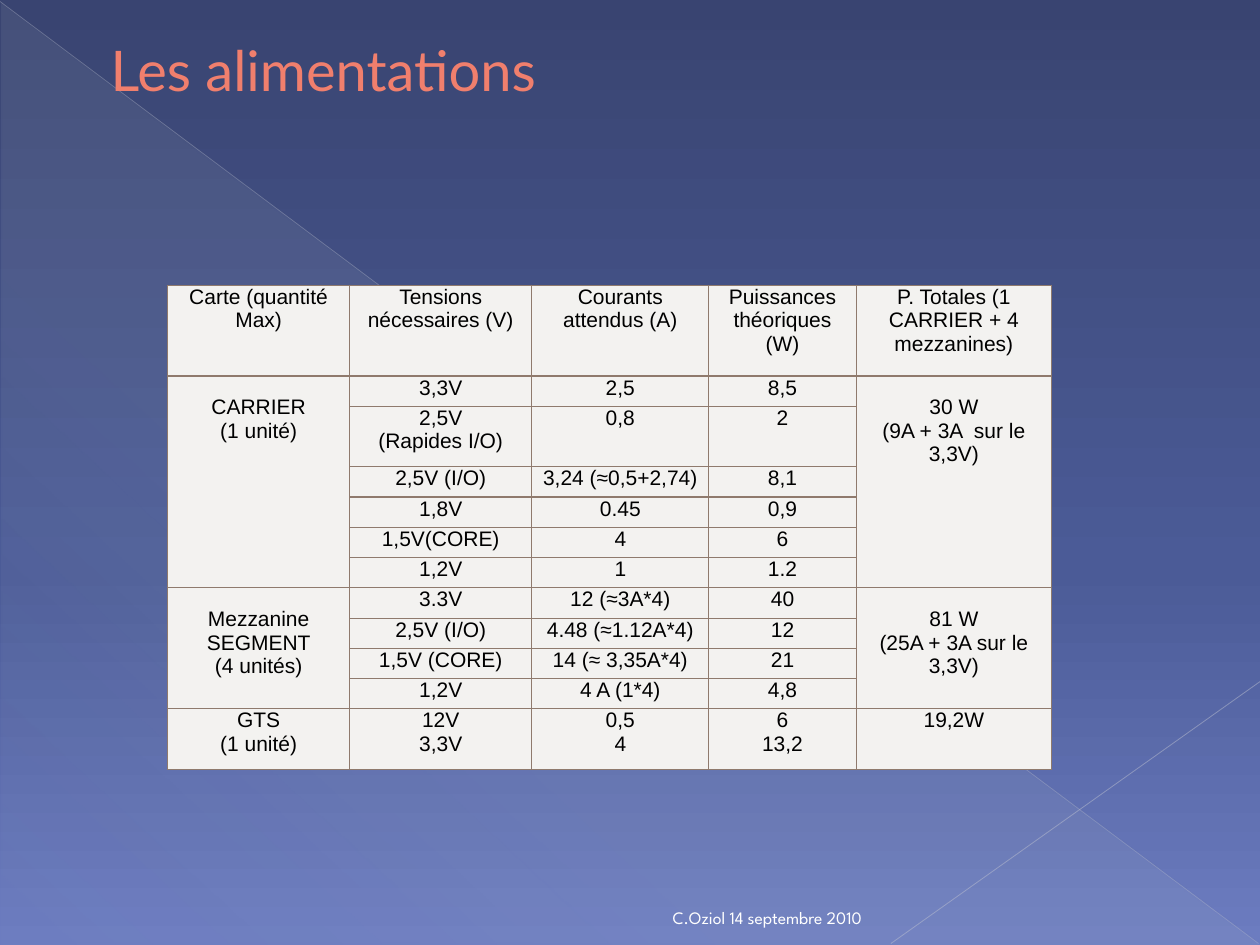
import pptx
import pptx.util
import pptx.dml.color
import pptx.enum.shapes
import pptx.enum.text
import pptx.oxml
import pptx.oxml.ns
import lxml.etree

Cm, Pt = pptx.util.Cm, pptx.util.Pt
RGBColor = pptx.dml.color.RGBColor
Align, Anchor = pptx.enum.text.PP_ALIGN, pptx.enum.text.MSO_ANCHOR
qn = pptx.oxml.ns.qn

NIGHT = RGBColor(0x39, 0x44, 0x71)
BLUE = RGBColor(0x4B, 0x5B, 0x97)
LILAC = RGBColor(0x6C, 0x7C, 0xC0)
MIST = RGBColor(0xC5, 0xD1, 0xD7)
FALL = RGBColor(0xBA, 0xBE, 0xCD)
RISE = RGBColor(0xC2, 0xC5, 0xD2)
CORAL = RGBColor(0xF0, 0x7F, 0x6D)
RUST = RGBColor(0x91, 0x45, 0x33)
WHITE = RGBColor(0xFF, 0xFF, 0xFF)
BLACK = RGBColor(0, 0, 0)
PAPER = RGBColor(0xF3, 0xF2, 0xF0)
TAUPE = RGBColor(0x8F, 0x7A, 0x6D)

UNIT = 0.61
COLS = [3.67, 3.67, 3.57, 2.97, 3.94]
ROWS = [3, 1, 2, 1, 1, 1, 1, 1, 1, 1, 1, 2]
SPANS = {(1, 0): 6, (1, 4): 6, (7, 0): 4, (7, 4): 4}
DATA = [
    ["Carte (quantité\nMax)", "Tensions nécessaires (V)", "Courants attendus (A)",
     "Puissances\nthéoriques (W)", "P. Totales (1 CARRIER + 4 mezzanines)"],
    ["CARRIER\n(1 unité)", "3,3V", "2,5", "8,5", "30 W\n(9A + 3A  sur le 3,3V)"],
    ["", "2,5V\n(Rapides I/O)", "0,8", "2", ""],
    ["", "2,5V (I/O)", "3,24 (≈0,5+2,74)", "8,1", ""],
    ["", "1,8V", "0.45", "0,9", ""],
    ["", "1,5V(CORE)", "4", "6", ""],
    ["", "1,2V", "1", "1.2", ""],
    ["Mezzanine\nSEGMENT\n(4 unités)", "3.3V", "12 (≈3A*4)", "40",
     "81 W\n(25A + 3A sur le 3,3V)"],
    ["", "2,5V (I/O)", "4.48 (≈1.12A*4)", "12", ""],
    ["", "1,5V (CORE)", "14 (≈ 3,35A*4)", "21", ""],
    ["", "1,2V", "4 A (1*4)", "4,8", ""],
    ["GTS\n(1 unité)", "12V\n3,3V", "0,5\n4", "6\n13,2", "19,2W"],
]


def node(root, tag, **attrs):
    """Append a drawing element and return it."""
    return lxml.etree.SubElement(root, qn(tag), {k: str(v) for k, v in attrs.items()})


def tint(root, color, alpha=100):
    """Append a colour with its opacity in percent."""
    item = node(root, "a:srgbClr", val=color)
    if alpha < 100:
        node(item, "a:alpha", val=alpha * 1000)


def blend(fill, root, stops, angle):
    """Fill with a linear gradient of (place, colour, opacity) stops."""
    fill.gradient()
    grad = next(root.iter(qn("a:gradFill")))
    for child in list(grad):
        grad.remove(child)
    steps = node(grad, "a:gsLst")
    for place, color, alpha in stops:
        tint(node(steps, "a:gs", pos=place * 1000), color, alpha)
    node(grad, "a:lin", ang=angle * 60000, scaled=0)


def write(para, text, font, size, color):
    """Add one styled run to a paragraph."""
    run = para.add_run()
    run.text = text
    run.font.name, run.font.size = font, Pt(size)
    run.font.color.rgb = color
    return run


def stroke(slide, start, end, color, width, alpha):
    """Draw a translucent straight line."""
    kind = pptx.enum.shapes.MSO_CONNECTOR.STRAIGHT
    line = slide.shapes.add_connector(kind, *map(Cm, start + end))
    line.line.width = Pt(width)
    line.line.color.rgb = color
    rgb = next(line._element.spPr.iter(qn("a:srgbClr")))
    node(rgb, "a:alpha", val=alpha * 1000)
    node(line._element.spPr, "a:effectLst")


def backdrop(slide, left, top, width, height):
    """Paint the background, its pale triangle and two crossing lines."""
    blend(slide.background.fill, slide._element,
          [(0, NIGHT, 100), (60, BLUE, 100), (100, LILAC, 100)], 90)
    kind = pptx.enum.shapes.MSO_SHAPE.RIGHT_TRIANGLE
    wedge = slide.shapes.add_shape(kind, Cm(left + 0.03), Cm(top + 0.05),
                                   Cm(width - 0.03), Cm(height - 0.05))
    wedge.shadow.inherit = False
    wedge.line.fill.background()
    blend(wedge.fill, wedge._element, [(0, MIST, 10), (70, MIST, 8), (100, MIST, 1)], 133)
    right, base = left + width, top + height - 0.03
    stroke(slide, (left, top + 0.03), (right - 0.03, base), FALL, 0.39, 35)
    stroke(slide, (right, top + 13.74), (right - 7.44, base), RISE, 0.47, 45)


def label(slide, left, top, width, height, anchor, *style):
    """Place one line of text and return its run."""
    box = slide.shapes.add_textbox(*map(Cm, (left, top, width, height)))
    frame = box.text_frame
    frame.word_wrap = True
    frame.vertical_anchor = anchor
    return write(frame.paragraphs[0], *style)


def title(slide, *box):
    """Place the outlined heading."""
    run = label(slide, *box, Anchor.MIDDLE, "Les alimentations", "Lato", 32, CORAL)
    props = run.font._element
    edge = node(props, "a:ln", w=Pt(0.5))
    tint(node(edge, "a:solidFill"), RUST)
    props.insert(0, edge)


def footer(slide, *box):
    """Place the author and date."""
    label(slide, *box, Anchor.BOTTOM, "C.Oziol 14 septembre 2010",
          "League Spartan", 10, WHITE)


def paint(cell, text, inset):
    """Style a table cell and write its lines."""
    props = cell._tc.get_or_add_tcPr()
    for side in "LRTB":
        edge = node(props, "a:ln" + side, w=Pt(0.75))
        tint(node(edge, "a:solidFill"), TAUPE)
    cell.fill.solid()
    cell.fill.fore_color.rgb = PAPER
    cell.margin_left = cell.margin_right = Cm(0.18)
    cell.margin_top, cell.margin_bottom = Cm(inset), 0
    frame = cell.text_frame
    frame.paragraphs[0].font.size = Pt(12)
    for i, line in enumerate(text.split("\n") if text else []):
        para = frame.add_paragraph() if i else frame.paragraphs[0]
        para.alignment = Align.CENTER
        write(para, line, "Arial", 12, BLACK)


def supply(slide, left, top):
    """Build the table of power supplies."""
    size = (sum(COLS), UNIT * sum(ROWS))
    table = slide.shapes.add_table(len(ROWS), len(COLS),
                                   *map(Cm, (left, top) + size)).table
    table.first_row = table.horz_banding = False
    for col, width in zip(table.columns, COLS):
        col.width = Cm(width)
    for row, count in zip(table.rows, ROWS):
        row.height = Cm(UNIT * count)
    for r, texts in enumerate(DATA):
        for c, text in enumerate(texts):
            paint(table.cell(r, c), text, 0.4 if (r, c) in SPANS else 0)
    for (r, c), count in SPANS.items():
        table.cell(r, c).merge(table.cell(r + count - 1, c))


def main():
    """Build and save the slide."""
    deck = pptx.Presentation()
    deck.slide_width, deck.slide_height = Cm(25.4), Cm(19.05)
    slide = deck.slides.add_slide(deck.slide_layouts[6])
    backdrop(slide, 0, 0, 25.4, 19.05)
    title(slide, 1.98, 0, 20.24, 2.77)
    footer(slide, 13.31, 18, 5.92, 0.84)
    supply(slide, 3.38, 5.75)
    deck.save("out.pptx")


if __name__ == "__main__":
    main()
